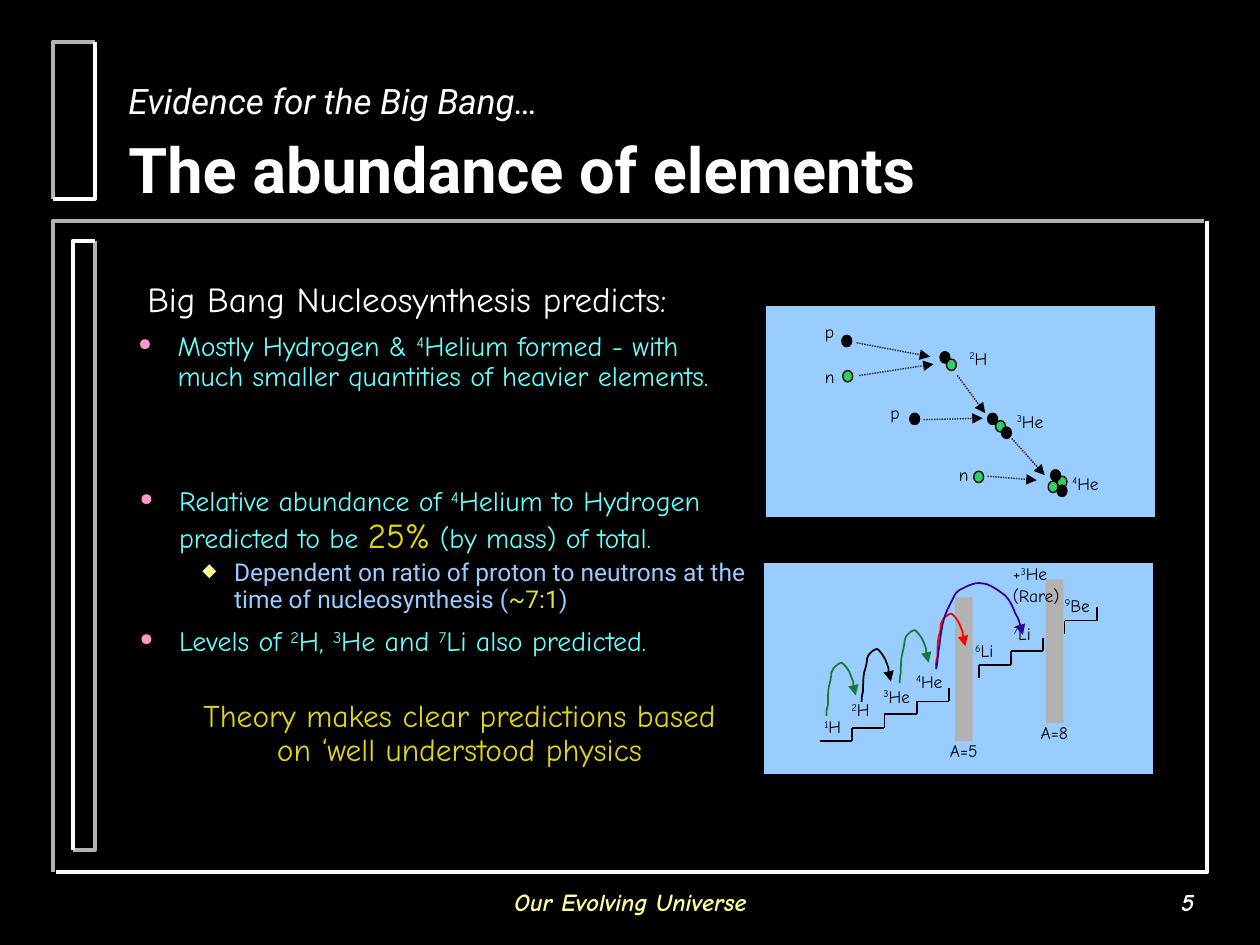
from dataclasses import dataclass
from pptx import Presentation, util as u
from pptx.dml.color import RGBColor
from pptx.enum import dml, shapes, text
from pptx.oxml.ns import qn
from lxml import etree

COLOURS = {
    "black": "000000", "white": "FFFFFF", "grey": "B2B2B2", "panel": "99CCFF",
    "cyan": "66FFFF", "yellow": "E4D60C", "ratio": "E5DD43", "pale": "FFFF99",
    "pink": "FF99CC", "neutron": "31CE63", "green": "1C7839", "red": "FF0000",
    "violet": "31009C",
}
COMIC, ROBOTO = "Comic Neue", "Roboto"
MARGIN = 0.1
LEFT, CENTRE, RIGHT = text.PP_ALIGN.LEFT, text.PP_ALIGN.CENTER, text.PP_ALIGN.RIGHT


@dataclass
class Run:
    words: str
    size: float = 10
    colour: str = "black"
    font: str = COMIC
    bold: bool = False
    italic: bool = False
    raised: bool = False


@dataclass
class Para:
    runs: list[Run]
    margin: float = 0
    indent: float = 0
    before: float = 0
    spacing: float = 1.0
    align: text.PP_ALIGN = LEFT
    bullet: tuple[str, str, int] | None = None


@dataclass
class Hop:
    x: float
    y: float
    colour: str


def inch(value: float) -> u.Cm:
    return u.Cm(round(value * 2.54, 2))


def rgb(name: str) -> RGBColor:
    return RGBColor.from_string(COLOURS[name])


def isotope(mass: int, rest: str, size: float = 10, colour: str = "black") -> list[Run]:
    return [Run(str(mass), size, colour, raised=True), Run(rest, size, colour)]


def add_bullet(pPr, char: str, colour: str, percent: int) -> None:
    tint = etree.SubElement(pPr, qn("a:buClr"))
    etree.SubElement(tint, qn("a:srgbClr"), val=COLOURS[colour])
    etree.SubElement(pPr, qn("a:buSzPct"), val=str(percent * 1000))
    etree.SubElement(pPr, qn("a:buChar"), char=char)


def add_text(x, y, w, h, paras: list[Para], wrap=True, top=0.05, left=MARGIN,
             anchor=text.MSO_ANCHOR.TOP) -> None:
    frame = slide.shapes.add_textbox(*map(inch, (x, y, w, h))).text_frame
    frame.word_wrap, frame.vertical_anchor = wrap, anchor
    frame.margin_left, frame.margin_top = inch(left), inch(top)
    for number, para in enumerate(paras):
        line = frame.add_paragraph() if number else frame.paragraphs[0]
        line.alignment, line.line_spacing = para.align, para.spacing
        line.space_before = u.Pt(para.before)
        pPr = line._p.get_or_add_pPr()
        pPr.set("marL", str(inch(para.margin)))
        pPr.set("indent", str(inch(para.indent)))
        if para.bullet:
            add_bullet(pPr, *para.bullet)
        for part in para.runs:
            run = line.add_run()
            run.text = part.words
            font = run.font
            font.name, font.size = part.font, u.Pt(part.size)
            font.bold, font.italic = part.bold, part.italic
            font.color.rgb = rgb(part.colour)
            if part.raised:
                run._r.get_or_add_rPr().set("baseline", "30000")


def label(x: float, y: float, w: float, *lines: list[Run], left=MARGIN) -> None:
    add_text(x, y, w, 0.3, [Para(runs) for runs in lines], wrap=False, left=left)


def add_solid(kind, x, y, w, h, fill: str, line: str | None = "black") -> None:
    solid = slide.shapes.add_shape(kind, *map(inch, (x, y, w, h)))
    solid.shadow.inherit = False
    solid.fill.solid()
    solid.fill.fore_color.rgb = rgb(fill)
    if line:
        solid.line.color.rgb, solid.line.width = rgb(line), u.Pt(0.75)
    else:
        solid.line.fill.background()


def add_arrowhead(shape) -> None:
    etree.SubElement(shape.line._get_or_add_ln(), qn("a:tailEnd"), type="triangle")


def add_line(x1, y1, x2, y2, width=1.0, dotted_arrow=False) -> None:
    line = slide.shapes.add_connector(shapes.MSO_CONNECTOR.STRAIGHT,
                                      *map(inch, (x1, y1, x2, y2)))
    line.line.color.rgb, line.line.width = rgb("black"), u.Pt(width)
    if dotted_arrow:
        line.line.dash_style = dml.MSO_LINE.ROUND_DOT
        add_arrowhead(line)
    etree.SubElement(line._element.spPr, qn("a:effectLst"))


def add_outline(points, colour: str, width: float):
    (x, y), *rest = [(inch(px), inch(py)) for px, py in points]
    builder = slide.shapes.build_freeform(x, y)
    builder.add_line_segments(rest, close=False)
    outline = builder.convert_to_shape()
    outline.shadow.inherit = False
    outline.fill.background()
    outline.line.color.rgb, outline.line.width = rgb(colour), u.Pt(width)
    return outline


def add_hop(hop: Hop, knots) -> None:
    """Draw a curved arrow, every three points after the first being one Bezier."""
    curve = add_outline([(hop.x + dx, hop.y + dy) for dx, dy in knots], hop.colour, 1)
    segments = list(curve._element.iter(qn("a:lnTo")))
    for start in range(0, len(segments), 3):
        first, *others = segments[start:start + 3]
        first.tag = qn("a:cubicBezTo")
        for other in others:
            first.append(other[0])
            other.getparent().remove(other)
    add_arrowhead(curve)


def add_stairs(x: float, y: float, moves: str) -> None:
    """Climb by treads (t) and risers (r)."""
    for move in moves:
        end_x, end_y = (x + 0.255, y) if move == "t" else (x, y - 0.105)
        add_line(x, y, end_x, end_y)
        x, y = end_x, end_y


prs = Presentation()
prs.slide_width, prs.slide_height = inch(10), inch(7.5)
slide = prs.slides.add_slide(prs.slide_layouts[6])
slide.background.fill.solid()
slide.background.fill.fore_color.rgb = rgb("black")
RECT, OVAL = shapes.MSO_SHAPE.RECTANGLE, shapes.MSO_SHAPE.OVAL

# Frame and footer
for colour, corners in [
    ("grey", [(9.56, 1.75), (0.42, 1.75), (0.42, 6.92)]),
    ("white", [(9.58, 1.75), (9.58, 6.92), (0.44, 6.92)]),
    ("grey", [(0.58, 6.75), (0.75, 6.75), (0.75, 1.91)]),
    ("white", [(0.58, 6.75), (0.58, 1.91), (0.75, 1.91)]),
    ("grey", [(0.75, 0.33), (0.42, 0.33), (0.42, 1.58)]),
    ("white", [(0.75, 0.33), (0.75, 1.58), (0.42, 1.58)]),
]:
    add_outline(corners, colour, 2.25)
for x, w, words, colour, align in [(3.42, 3.17, "Our Evolving Universe", "pale", CENTRE),
                                   (7.5, 2.08, "5", "white", RIGHT)]:
    add_text(x, 6.91, w, 0.5,
             [Para([Run(words, 14, colour, bold=True, italic=True)], align=align)],
             wrap=False, anchor=text.MSO_ANCHOR.MIDDLE)

# Fusion chain
add_solid(RECT, 6.07, 2.42, 3.1, 1.69, "panel")
for x, y, name in [(6.45, 2.5, "p"), (6.45, 2.85, "n"), (6.97, 3.14, "p"), (7.51, 3.63, "n")]:
    label(x, y, 0.27, [Run(name)])
for x, y, w, mass, element in [(7.55, 2.71, 0.41, 2, "H"), (7.93, 3.21, 0.48, 3, "He"),
                               (8.37, 3.7, 0.48, 4, "He")]:
    label(x, y, w, isotope(mass, element), left=0.14)
for x, y, nucleon in [
    (6.68, 2.66, "black"), (6.69, 2.94, "neutron"), (7.46, 2.79, "black"),
    (7.51, 2.85, "neutron"), (7.22, 3.28, "black"), (7.9, 3.34, "neutron"),
    (7.95, 3.39, "black"), (7.84, 3.28, "black"), (7.73, 3.74, "neutron"),
    (8.39, 3.78, "neutron"), (8.39, 3.85, "black"), (8.34, 3.73, "black"),
    (8.32, 3.82, "neutron"),
]:
    add_solid(OVAL, x, y, 0.08, 0.09, nucleon)
for ends in [(6.8, 2.72, 7.38, 2.83), (6.82, 2.98, 7.41, 2.89), (7.6, 2.98, 7.82, 3.28),
             (7.33, 3.33, 7.8, 3.32), (8.03, 3.48, 8.29, 3.77), (7.84, 3.78, 8.23, 3.81)]:
    add_line(*ends, width=0.75, dotted_arrow=True)

# Mass staircase
add_solid(RECT, 6.06, 4.46, 3.1, 1.69, "panel")
for x, y, w, mass, element in [
    (6.4, 5.63, 0.4, 1, "H"), (6.62, 5.5, 0.41, 2, "H"), (6.87, 5.39, 0.48, 3, "He"),
    (7.13, 5.27, 0.48, 4, "He"), (7.6, 5.03, 0.44, 6, "Li"), (7.9, 4.89, 0.44, 7, "Li"),
    (8.31, 4.67, 0.45, 9, "Be"),
]:
    label(x, y, w, isotope(mass, element), left=0.14)
for start in [(6.51, 5.88, "trtrtrtr"), (7.77, 5.38, "rtrtr"), (8.45, 5.03, "rtr")]:
    add_stairs(*start)
for x, y, gap in [(7.58, 4.74, "A=5"), (8.3, 4.6, "A=8")]:
    add_solid(RECT, x, y, 0.14, 1.14, "grey", None)
    label(x - 0.14, y + 1.08, 0.45, [Run(gap)])

SHORT_HOP = [
    (0, .42), (0, .4), (0, .37), (.01, .34), (.01, .3), (.01, .23), (.02, .19),
    (.03, .15), (.04, .11), (.04, .08), (.05, .06), (.05, .05), (.06, .04),
    (.08, .02), (.1, 0), (.12, 0), (.14, .01), (.16, .04), (.18, .07),
    (.19, .09), (.2, .12), (.21, .15), (.21, .18), (.22, .24), (.23, .26)]
LONG_HOP = [
    (0, .69), (.01, .65), (.01, .61), (.02, .55), (.03, .48), (.04, .38), (.06, .31),
    (.07, .25), (.11, .18), (.13, .14), (.15, .1), (.15, .09), (.19, .06),
    (.23, .04), (.3, 0), (.36, .01), (.42, .01), (.5, .07), (.55, .11),
    (.59, .15), (.61, .2), (.63, .25), (.66, .3), (.68, .39), (.69, .42)]
for hop in [Hop(6.84, 5.15, "black"), Hop(7.14, 5, "green"), Hop(6.56, 5.26, "green"),
            Hop(7.43, 4.87, "red")]:
    add_hop(hop, SHORT_HOP)
add_hop(Hop(7.43, 4.62, "violet"), LONG_HOP)
label(7.94, 4.42, 0.6, [Run("+"), *isotope(3, "He")], [Run("(Rare)")])

# Predictions
point = {"margin": 0.81, "indent": -0.31, "spacing": 0.9, "bullet": ("●", "pink", 60)}
body = (16, "cyan")
add_text(0.5, 1.77, 5.31, 3.06, [
    Para([Run("Big Bang Nucleosynthesis predicts:", 20, "white")], margin=0.57, spacing=0.9),
    Para([Run("Mostly Hydrogen & ", *body),
          *isotope(4, "Helium formed - with much smaller quantities of heavier elements.", *body)],
         before=7, **point),
], top=0.47)
add_text(0.53, 5.21, 5.42, 1.53, [
    Para([Run("Theory makes clear predictions based on ‘well understood physics", 18, "yellow")],
         margin=0.81, spacing=0.9, align=CENTRE),
], top=0.35)
add_text(0.51, 3.43, 5.7, 3.06, [
    Para([Run("Relative abundance of ", *body),
          *isotope(4, "Helium to Hydrogen predicted to be ", *body),
          Run("25%", 20, "yellow"), Run(" (by mass) of total.", *body)], **point),
    Para([Run("Dependent on ratio of proton to neutrons at the time of nucleosynthesis (",
              14, "panel", ROBOTO),
          Run("~7:1", 14, "ratio", ROBOTO), Run(")", 14, "panel", ROBOTO)],
         margin=1.25, indent=-0.25, before=2.8, spacing=0.9, bullet=("◆", "pale", 75)),
    Para([Run("Levels of ", *body), *isotope(2, "H, ", *body), *isotope(3, "He and ", *body),
          *isotope(7, "Li also predicted.", *body)], before=8, **point),
], top=0.44)

# Title
add_text(0.92, 0.38, 8.5, 1.21, [
    Para([Run("Evidence for the Big Bang…", 20, "white", ROBOTO, italic=True)]),
    Para([Run("The abundance of elements", 36, "white", ROBOTO, bold=True)], before=5),
], top=0.25)

prs.save("out.pptx")
